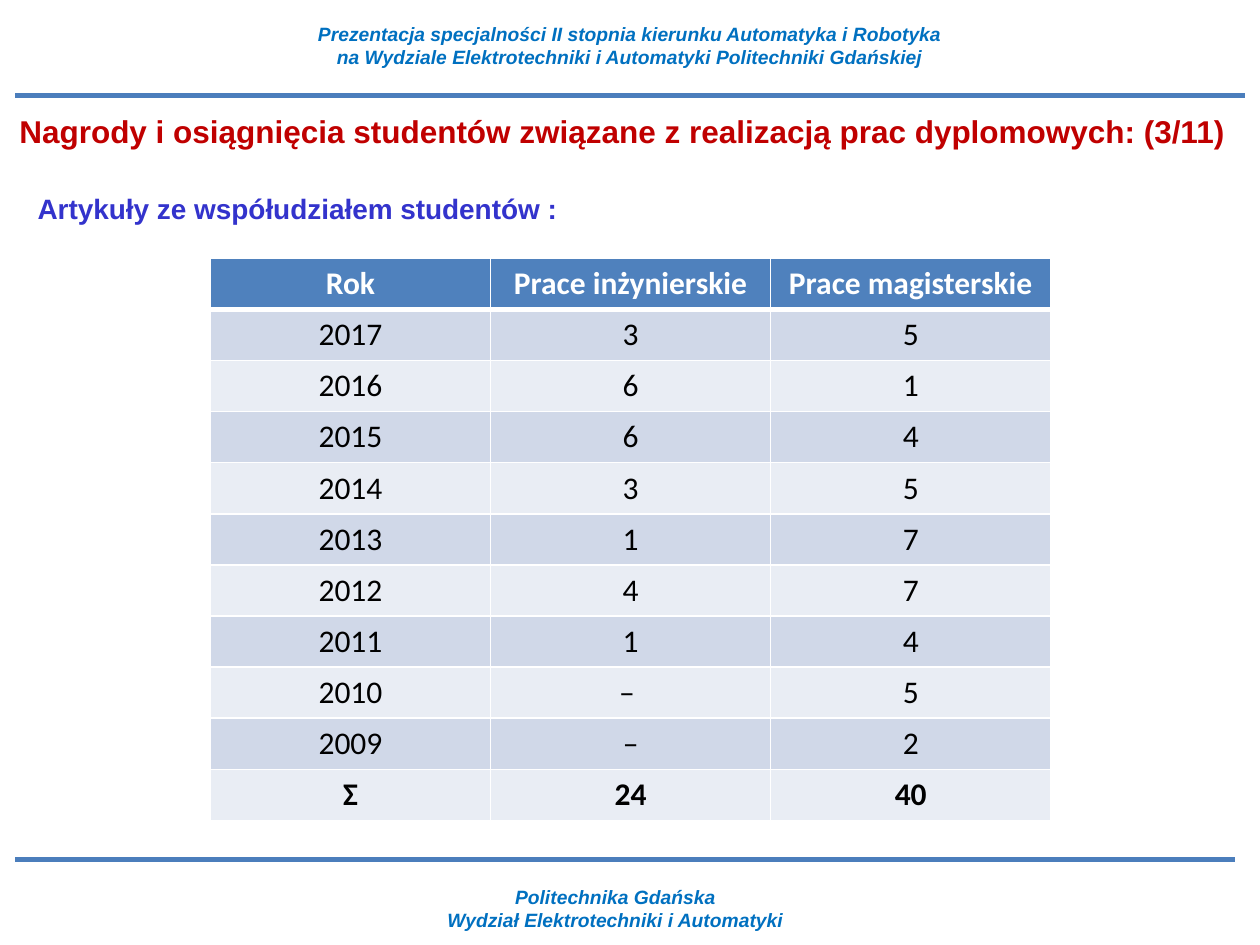
from lxml import etree
from pptx import Presentation
from pptx.dml.color import RGBColor
from pptx.enum.shapes import MSO_CONNECTOR
from pptx.enum.text import MSO_ANCHOR, MSO_AUTO_SIZE, PP_ALIGN
from pptx.oxml.ns import qn
from pptx.util import Inches, Pt

STRAIGHT = MSO_CONNECTOR.STRAIGHT
TOP, MIDDLE = MSO_ANCHOR.TOP, MSO_ANCHOR.MIDDLE
NO_FIT = MSO_AUTO_SIZE.NONE
LEFT, CENTER = PP_ALIGN.LEFT, PP_ALIGN.CENTER

WHITE = RGBColor(0xFF, 0xFF, 0xFF)
BLACK = RGBColor(0, 0, 0)
RED = RGBColor(0xC0, 0, 0)
SKY = RGBColor(0, 0x70, 0xC0)
INDIGO = RGBColor(0x33, 0x33, 0xCC)
RULE = RGBColor(0x4B, 0x7E, 0xBC)
HEAD = RGBColor(0x4F, 0x81, 0xBD)
BANDS = (RGBColor(0xE9, 0xED, 0xF4), RGBColor(0xD0, 0xD8, 0xE8))

ROWS = [
    ("Rok", "Prace inżynierskie", "Prace magisterskie"),
    ("2017", "3", "5"),
    ("2016", "6", "1"),
    ("2015", "6", "4"),
    ("2014", "3", "5"),
    ("2013", "1", "7"),
    ("2012", "4", "7"),
    ("2011", "1", "4"),
    ("2010", "– ", "5"),
    ("2009", "–", "2"),
    ("Σ", "24", "40"),
]


def add_run(para, text, size, color, face="Arial", bold=True, italic=False):
    run = para.add_run()
    run.text = text
    font = run.font
    font.name, font.size = face, Pt(size)
    font.bold, font.italic = bold, italic
    font.color.rgb = color


def fill_text(shape, lines, size, color, align=CENTER, italic=False, wrap=True):
    frame = shape.text_frame
    frame.word_wrap = wrap
    frame.auto_size = NO_FIT
    frame.vertical_anchor = TOP
    for i, line in enumerate(lines):
        para = frame.add_paragraph() if i else frame.paragraphs[0]
        para.alignment = align
        add_run(para, line, size, color, italic=italic)


def add_text(slide, box, lines, size, color, **style):
    shape = slide.shapes.add_textbox(*map(Inches, box))
    fill_text(shape, lines, size, color, **style)


def add_title(slide, box, text):
    title = slide.shapes.title
    title.left, title.top, title.width, title.height = map(Inches, box)
    fill_text(title, [text], 18, RED)


def add_rule(slide, right, y):
    line = slide.shapes.add_connector(
        STRAIGHT, Inches(0.12), Inches(y), Inches(right), Inches(y))
    line.line.color.rgb = RULE
    line.line.width = Pt(3)
    etree.SubElement(line._element.spPr, qn("a:effectLst"))


def add_edges(cell, top, bottom):
    """Draw white cell borders, with top and bottom widths in points."""
    props = cell._tc.get_or_add_tcPr()
    for side, width in (("L", 1), ("R", 1), ("T", top), ("B", bottom)):
        edge = etree.SubElement(props, qn("a:ln" + side), w=str(Pt(width)))
        fill = etree.SubElement(edge, qn("a:solidFill"))
        etree.SubElement(fill, qn("a:srgbClr"), val=str(WHITE))


def add_grid(slide, box, rows):
    count = len(rows)
    table = slide.shapes.add_table(
        count, len(rows[0]), *map(Inches, box)).table
    for r, row in enumerate(rows):
        table.rows[r].height = Inches(box[3] / count)
        head = r == 0
        for c, text in enumerate(row):
            cell = table.cell(r, c)
            add_edges(cell, 3 if r == 1 else 1, 3 if head else 1)
            cell.fill.solid()
            cell.fill.fore_color.rgb = HEAD if head else BANDS[r % 2]
            cell.vertical_anchor = MIDDLE
            para = cell.text_frame.paragraphs[0]
            para.alignment = CENTER
            add_run(para, text, 18, WHITE if head else BLACK, "Calibri",
                    bold=r in (0, count - 1))


def main():
    deck = Presentation()
    deck.slide_width, deck.slide_height = Inches(10), Inches(7.5)
    slide = deck.slides.add_slide(deck.slide_layouts[5])

    add_text(slide, (1.77, 6.98, 6.23, 0.47),
             ["Politechnika Gdańska", "Wydział Elektrotechniki i Automatyki"],
             11, SKY, italic=True)
    add_rule(slide, 9.8, 6.82)
    add_rule(slide, 9.88, 0.76)
    add_text(slide, (0.59, 0.13, 8.82, 0.47),
             ["Prezentacja specjalności II stopnia kierunku Automatyka i Robotyka",
              "na Wydziale Elektrotechniki i Automatyki Politechniki Gdańskiej"],
             11, SKY, italic=True)
    add_text(slide, (0.2, 1.47, 4.38, 0.37),
             ["Artykuły ze współudziałem studentów :"],
             16, INDIGO, align=LEFT, wrap=False)
    add_grid(slide, (1.67, 2.05, 6.67, 4.46), ROWS)
    add_title(slide, (0, 0.84, 9.88, 0.4),
              "Nagrody i osiągnięcia studentów związane z realizacją "
              "prac dyplomowych: (3/11)")
    deck.save("out.pptx")


if __name__ == "__main__":
    main()
